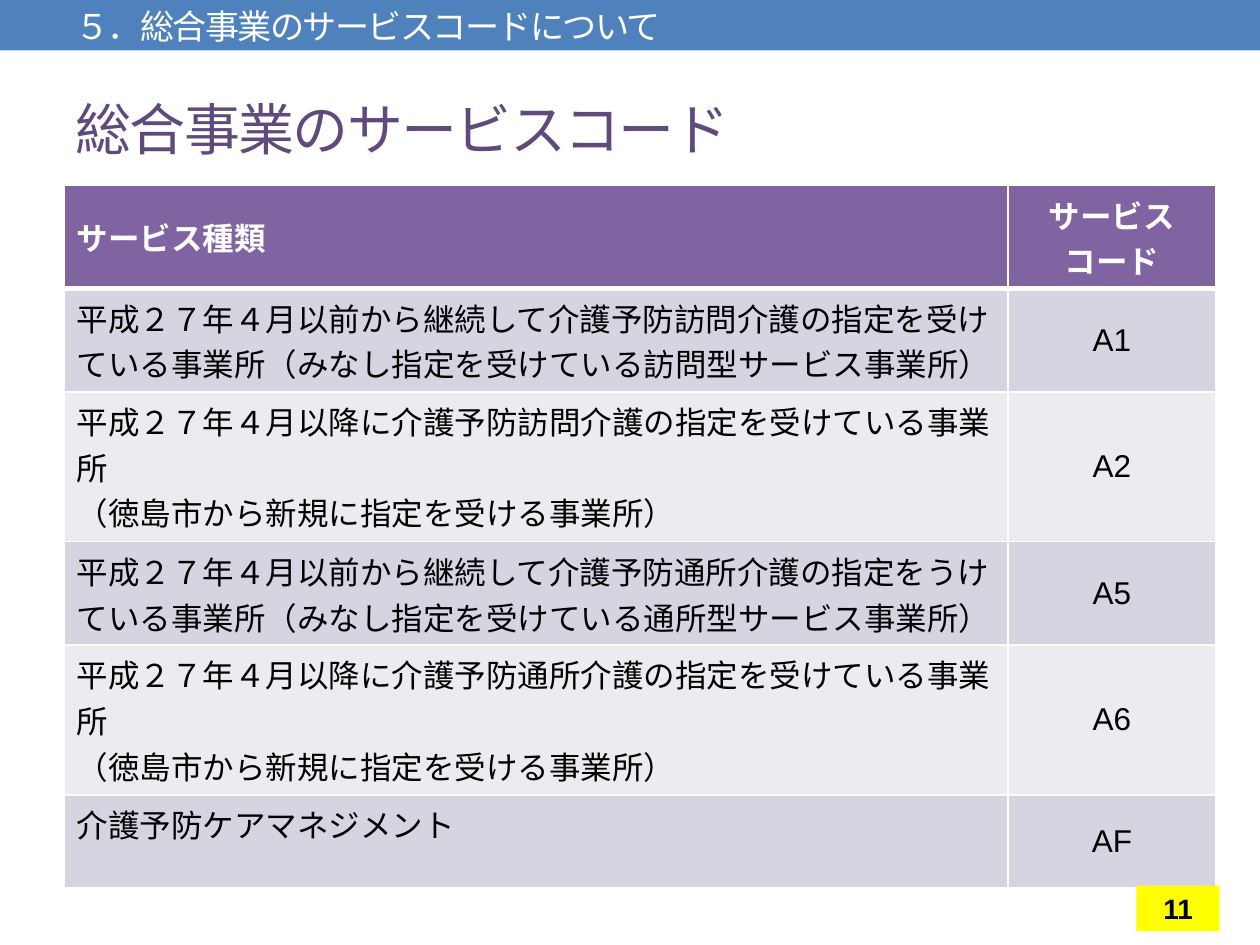
from pptx import Presentation
from pptx.dml.color import RGBColor as RGB
from pptx.enum.shapes import MSO_SHAPE as Preset
from pptx.enum.text import MSO_ANCHOR as Anchor, PP_ALIGN as Align
from pptx.oxml import parse_xml
from pptx.oxml.ns import nsdecls
from pptx.util import Inches, Pt

SECTION = "５．総合事業のサービスコードについて"
TITLE = "総合事業のサービスコード"
PAGE_NUMBER = "11"
NEW_DESIGNATION = "（徳島市から新規に指定を受ける事業所）"
HEADINGS = (["サービス種類"], ["サービス", "コード"])
SERVICES = [
    (["平成２７年４月以前から継続して介護予防訪問介護の指定を受けている事業所"
      "（みなし指定を受けている訪問型サービス事業所）"], ["A1"]),
    (["平成２７年４月以降に介護予防訪問介護の指定を受けている事業所", NEW_DESIGNATION], ["A2"]),
    (["平成２７年４月以前から継続して介護予防通所介護の指定をうけている事業所"
      "（みなし指定を受けている通所型サービス事業所）"], ["A5"]),
    (["平成２７年４月以降に介護予防通所介護の指定を受けている事業所", NEW_DESIGNATION], ["A6"]),
    (["介護予防ケアマネジメント"], ["AF"]),
]
COLUMN_WIDTHS = (7.49, 1.65)
ROW_HEIGHTS = (0.82, 0.82, 1.19, 0.82, 1.19, 0.74)

THEME = {
    "font": "Arial",
    "band": "4F81BD",
    "heading_fill": "8064A2",
    "row_fills": ("D8D3E0", "EDEAF0"),
    "border": "FFFFFF",
    "badge": "FFFF00",
    "section": {"size": 19.5, "color": "FFFFFF", "bold": False},
    "title": {"size": 32, "color": "604A7B", "bold": False},
    "heading": {"size": 18, "color": "FFFFFF", "bold": True},
    "body": {"size": 18, "color": "000000", "bold": False},
    "page": {"size": 16, "color": "000000", "bold": True},
}


def write(frame, lines, style, align=Align.LEFT, spacing=None):
    """Write one paragraph per line; spacing is in hundredths of a point."""
    look = THEME[style]
    formats = {"name": THEME["font"], "size": Pt(look["size"]), "bold": look["bold"]}
    frame.word_wrap = True
    for index, line in enumerate(lines):
        paragraph = frame.paragraphs[0] if index == 0 else frame.add_paragraph()
        paragraph.alignment = align
        run = paragraph.add_run()
        run.text = line
        for name, value in formats.items():
            setattr(run.font, name, value)
        run.font.color.rgb = RGB.from_string(look["color"])
        if spacing is not None:
            run.font._element.set("spc", str(spacing))


def add_heading(slide, box, text, style):
    frame = slide.shapes.add_textbox(*map(Inches, box)).text_frame
    frame.vertical_anchor = Anchor.MIDDLE
    write(frame, [text], style, spacing=-100)


def add_block(slide, box, color):
    block = slide.shapes.add_shape(Preset.RECTANGLE, *map(Inches, box))
    block.shadow.inherit = False
    block.fill.solid()
    block.fill.fore_color.rgb = RGB.from_string(color)
    block.line.fill.background()
    return block


def set_borders(cell, widths):
    """Draw the cell borders; widths maps each side to points."""
    properties = cell._tc.get_or_add_tcPr()
    for side, width in widths.items():
        properties.append(parse_xml(
            f'<a:ln{side} {nsdecls("a")} w="{Pt(width)}"><a:solidFill>'
            f'<a:srgbClr val="{THEME["border"]}"/></a:solidFill></a:ln{side}>'))


def add_service_table(slide):
    rows = [HEADINGS, *SERVICES]
    table = slide.shapes.add_table(
        len(rows), len(COLUMN_WIDTHS), Inches(0.51), Inches(1.47),
        Inches(sum(COLUMN_WIDTHS)), Inches(sum(ROW_HEIGHTS))).table
    for column, width in zip(table.columns, COLUMN_WIDTHS):
        column.width = Inches(width)
    for row, height in zip(table.rows, ROW_HEIGHTS):
        row.height = Inches(height)
    for r, row in enumerate(rows):
        is_heading = r == 0
        fill = THEME["heading_fill"] if is_heading else THEME["row_fills"][(r - 1) % 2]
        for c, lines in enumerate(row):
            cell = table.cell(r, c)
            set_borders(cell, {"L": 1, "R": 1, "T": 3 if r == 1 else 1,
                               "B": 3 if is_heading else 1})
            cell.fill.solid()
            cell.fill.fore_color.rgb = RGB.from_string(fill)
            cell.vertical_anchor = Anchor.MIDDLE if is_heading or c else Anchor.TOP
            write(cell.text_frame, lines, "heading" if is_heading else "body",
                  Align.CENTER if c else Align.LEFT)


def main():
    deck = Presentation()
    deck.slide_width, deck.slide_height = Inches(10), Inches(7.5)
    slide = deck.slides.add_slide(deck.slide_layouts[6])
    add_block(slide, (0, 0, 10, 0.4), THEME["band"])
    add_heading(slide, (0.5, 0.58, 9, 0.88), TITLE, "title")
    add_service_table(slide)
    badge = add_block(slide, (9.02, 7.03, 0.66, 0.36), THEME["badge"])
    badge.text_frame.vertical_anchor = Anchor.MIDDLE
    write(badge.text_frame, [PAGE_NUMBER], "page", Align.CENTER)
    add_heading(slide, (0.5, 0, 9, 0.41), SECTION, "section")
    deck.save("out.pptx")


if __name__ == "__main__":
    main()
